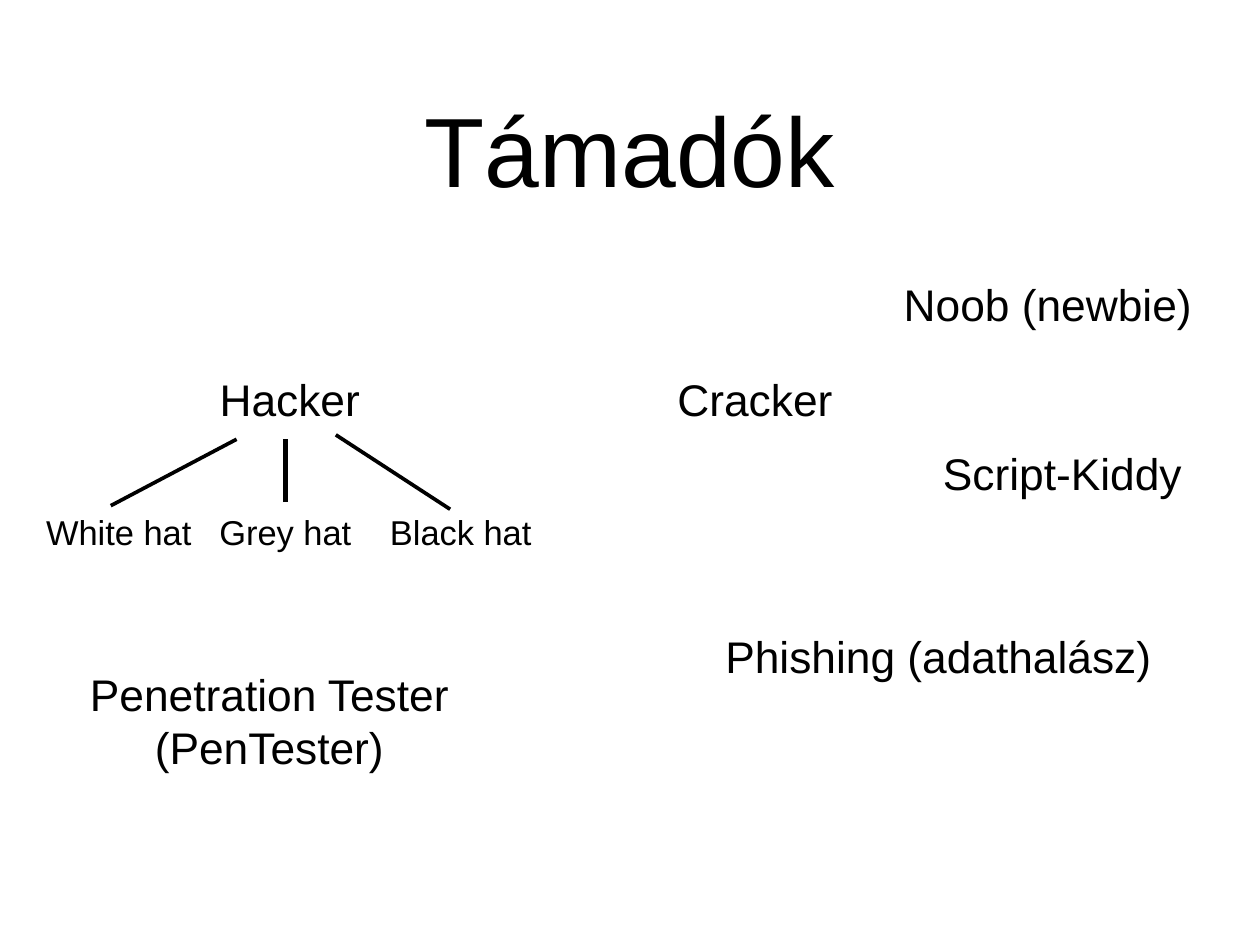
from lxml.etree import SubElement
from pptx import Presentation
from pptx.dml.color import RGBColor
from pptx.enum.shapes import MSO_CONNECTOR
from pptx.enum.text import MSO_ANCHOR, PP_ALIGN
from pptx.oxml.ns import qn
from pptx.util import Inches, Pt

BLACK = "000000"


def set_color(color_format, hex_color):
    color_format.rgb = RGBColor.from_string(hex_color)


def add_label(slide, text, left, top, width, height, size, wrap=False):
    """Add a centred text box with small, equal margins."""
    frame = slide.shapes.add_textbox(
        Inches(left), Inches(top), Inches(width), Inches(height)
    ).text_frame
    frame.word_wrap = wrap
    frame.vertical_anchor = MSO_ANCHOR.MIDDLE
    frame.margin_left = frame.margin_right = Inches(0.06)
    frame.margin_top = frame.margin_bottom = Inches(0.06)
    frame.text = text
    paragraph = frame.paragraphs[0]
    paragraph.alignment = PP_ALIGN.CENTER
    font = paragraph.runs[0].font
    font.name = "Arial"
    font.size = Pt(size)
    set_color(font.color, BLACK)


presentation = Presentation()
presentation.slide_width = Inches(14.22)
presentation.slide_height = Inches(10.67)
slide = presentation.slides.add_slide(presentation.slide_layouts[6])

add_label(slide, "Támadók", 1.04, 0.49, 12.14, 2.36, 80, wrap=True)

attackers = [
    ("Hacker", 2.4, 4.15, 1.74),
    ("Cracker", 7.57, 4.15, 1.9),
    ("Script-Kiddy", 10.54, 4.98, 2.9),
    ("Phishing (adathalász)", 8.11, 7.05, 4.96),
    ("Noob (newbie)", 10.11, 3.08, 3.43),
]
for text, left, top, width in attackers:
    add_label(slide, text, left, top, width, 0.71, 36)
add_label(slide, "Penetration Tester (PenTester)", 0.84, 7.48, 4.4, 1.31, 36, wrap=True)

# Hacker types: label, label centre, branch start, branch end, line width
hat_width = 1.8
hats = [
    ("White hat", 1.34, (1.25, 5.71), (2.67, 4.96), 3),
    ("Grey hat", 3.22, (3.22, 5.67), (3.22, 4.96), 4),
    ("Black hat", 5.2, (5.08, 5.75), (3.79, 4.91), 3),
]
for text, center, start, end, line_width in hats:
    add_label(slide, text, center - hat_width / 2, 5.71, hat_width, 0.58, 28)
    branch = slide.shapes.add_connector(
        MSO_CONNECTOR.STRAIGHT, *map(Inches, start + end)
    )
    set_color(branch.line.color, BLACK)
    branch.line.width = Pt(line_width)
    SubElement(branch.element.spPr, qn("a:effectLst"))

presentation.save("out.pptx")
